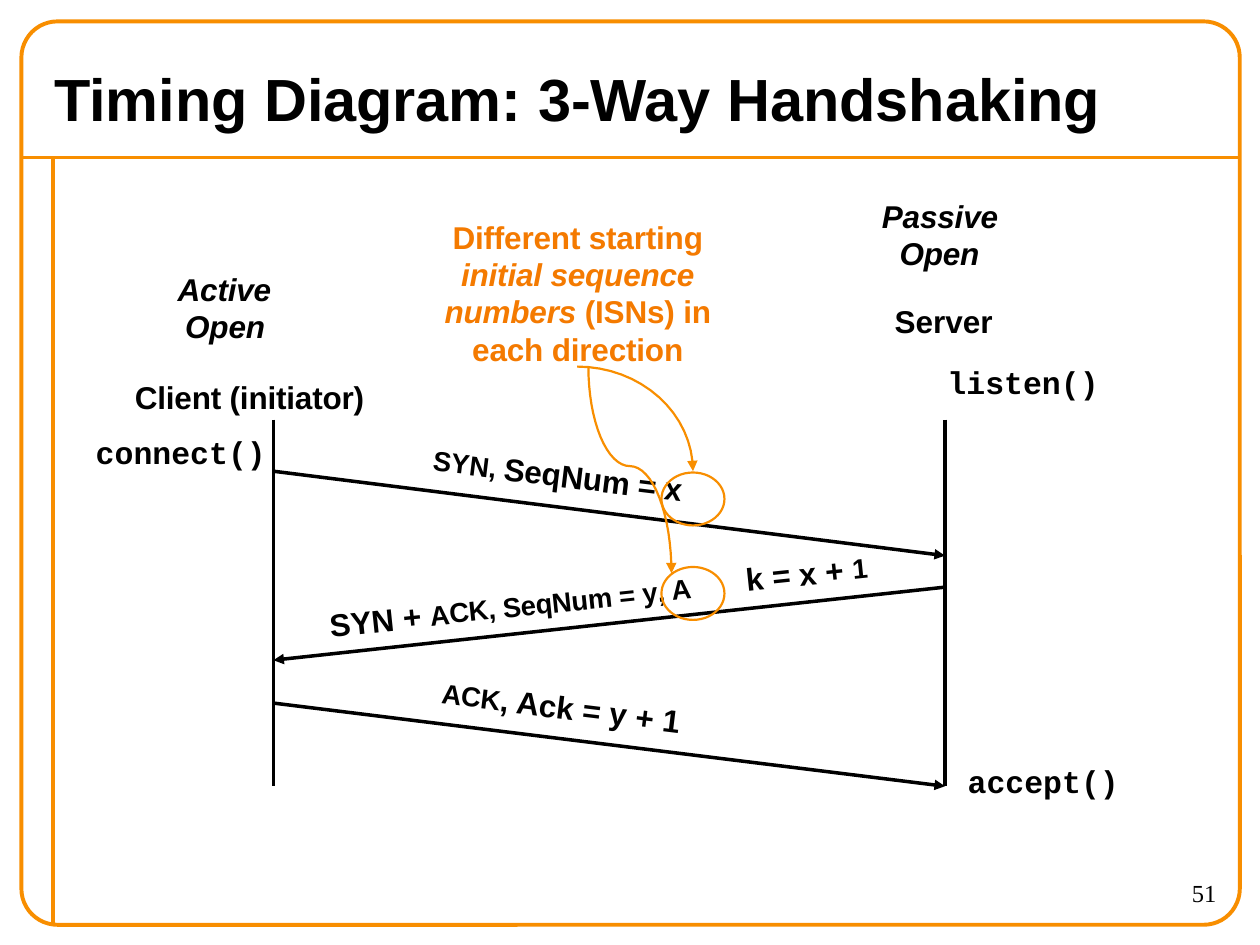
from math import cos, sin, pi

from lxml.etree import SubElement
from pptx import Presentation
from pptx.dml.color import RGBColor
from pptx.enum.shapes import MSO_CONNECTOR as Connector, MSO_SHAPE as Shape
from pptx.enum.text import PP_ALIGN as Align
from pptx.oxml.ns import qn
from pptx.util import Inches, Pt

COLORS = {"black": "000000", "frame": "F88E00", "note": "F47A00"}

BODY = {"name": "Arial", "size": Pt(18), "bold": True, "italic": False}
ROLE = {**BODY, "italic": True}
CODE = {**BODY, "name": "Courier New"}
TITLE = {**BODY, "size": Pt(34)}
FLAG = {**BODY, "size": Pt(27)}  # set as a slightly raised, reduced run
PAGE = {"name": "Times New Roman", "size": Pt(14), "bold": False}

CLIENT_X, SERVER_X = 2.17, 7.5
TOP, BOTTOM = 3.33, 6.24


def rgb(color):
    return RGBColor.from_string(COLORS[color])


def add_runs(paragraph, runs, color="black"):
    """Each run is (text, format, spacing in points)."""
    for text, style, spacing in runs:
        run = paragraph.add_run()
        run.text = text
        for attribute, value in style.items():
            setattr(run.font, attribute, value)
        run.font.color.rgb = rgb(color)
        properties = run._r.get_or_add_rPr()
        if spacing:
            properties.set("spc", str(round(spacing * 100)))
        if style is FLAG:
            properties.set("baseline", "2000")


def add_text(slide, box, paragraphs, color="black", rotation=0, indents=(), **layout):
    """Paragraphs are lists of runs; indents are (left, first line) pairs."""
    label = slide.shapes.add_textbox(*map(Inches, box))
    label.rotation = rotation
    frame = label.text_frame
    frame.word_wrap = True
    for side in ("left", "top", "right", "bottom"):
        setattr(frame, f"margin_{side}", 0)
    for index, runs in enumerate(paragraphs):
        paragraph = frame.add_paragraph() if index else frame.paragraphs[0]
        for attribute, value in layout.items():
            if index or attribute != "space_before":
                setattr(paragraph, attribute, value)
        if indents:
            left, first = indents[index]
            properties = paragraph._p.get_or_add_pPr()
            properties.set("marL", str(Inches(left)))
            properties.set("indent", str(Inches(first)))
        add_runs(paragraph, runs, color)


def style_line(shape, color, width, arrow=False):
    shape.line.color.rgb = rgb(color)
    shape.line.width = Pt(width)
    if arrow:
        SubElement(shape.line._get_or_add_ln(), qn("a:tailEnd"),
                   type="triangle", w="med", len="med")


def add_line(slide, start, end, color="black", width=2, arrow=False):
    line = slide.shapes.add_connector(Connector.STRAIGHT, *map(Inches, start + end))
    style_line(line, color, width, arrow)
    SubElement(line._element.spPr, qn("a:effectLst"))


def add_outline(slide, kind, box, width):
    outline = slide.shapes.add_shape(kind, *map(Inches, box))
    outline.shadow.inherit = False
    outline.fill.background()
    style_line(outline, "frame", width)
    return outline


def quarter_arc(center, radii, start, end, steps=16):
    """Points along an ellipse, angles in quarter turns clockwise from the right."""
    angles = [(start + (end - start) * i / steps) * pi / 2 for i in range(steps + 1)]
    return [(center[0] + radii[0] * cos(a), center[1] + radii[1] * sin(a)) for a in angles]


def add_curved_arrow(slide, points):
    first, *others = [(Inches(x), Inches(y)) for x, y in points]
    builder = slide.shapes.build_freeform(*first)
    builder.add_line_segments(others, close=False)
    curve = builder.convert_to_shape()
    curve.shadow.inherit = False
    curve.fill.background()
    style_line(curve, "frame", 1.25, arrow=True)


def add_frame(slide):
    add_line(slide, (0.17, 1.25), (9.83, 1.25), "frame", 2.25)
    add_line(slide, (0.42, 1.25), (0.42, 7.33), "frame", 2.25)
    border = add_outline(slide, Shape.ROUNDED_RECTANGLE, (0.17, 0.17, 9.67, 7.17), 2.25)
    border.adjustments[0] = 0.04
    add_text(slide, (0.43, 0.49, 9.15, 0.63),
             [[("Timing Diagram: 3-Way Handshaking", TITLE, 0)]])
    add_text(slide, (9.46, 6.97, 0.25, 0.25), [[("51", PAGE, 0)]])


def add_endpoints(slide):
    for x in (CLIENT_X, SERVER_X):
        add_line(slide, (x, TOP), (x, BOTTOM))
    add_text(slide, (0.75, 3, 2.18, 0.77),
             [[("Client (initiator)", BODY, -0.1)], [("connect()", CODE, 0)]],
             indents=[(0.32, 0), (0.01, 0)], space_before=Pt(10))
    add_text(slide, (7.09, 2.4, 1.64, 0.8),
             [[("Server", BODY, 0)], [("listen()", CODE, 0)]],
             indents=[(0.01, 0), (0.43, 0)], space_before=Pt(13))
    add_text(slide, (7.68, 6.05, 1.23, 0.33), [[("accept()", CODE, 0)]])
    add_text(slide, (1.4, 2.15, 0.78, 0.59), [[("Active Open", ROLE, -0.1)]],
             indents=[(0.07, -0.06)], line_spacing=Pt(21))
    add_text(slide, (6.99, 1.57, 0.96, 0.59), [[("Passive Open", ROLE, -0.1)]],
             indents=[(0.15, -0.14)], line_spacing=Pt(21))


def add_messages(slide):
    for start, end in (
        ((CLIENT_X, 3.74), (SERVER_X, 4.41)),
        ((SERVER_X, 4.66), (CLIENT_X, 5.24)),
        ((CLIENT_X, 5.58), (SERVER_X, BOTTOM)),
    ):
        add_line(slide, start, end, arrow=True)

    # Message labels, tilted along their arrows
    for box, tilt, runs in (
        ((3.43, 3.65, 2.11, 0.3), 7,
         [("SYN, ", FLAG, 0), ("SeqNum = x", BODY, -0.1)]),
        ((2.61, 4.67, 3.22, 0.3), 354,
         [("SYN + ", BODY, 0), ("ACK, ", FLAG, -0.1), ("SeqNum = ", FLAG, -0.1),
          ("y", FLAG, -2.1), (", A", FLAG, 0)]),
        ((5.92, 4.42, 1.03, 0.3), 354,
         [("k = x + ", BODY, 0), ("1", FLAG, 0)]),
        ((3.5, 5.49, 2, 0.3), 7,
         [("ACK", FLAG, -0.1), (", Ack = y + 1", BODY, 0)]),
    ):
        add_text(slide, box, [runs], rotation=tilt, line_spacing=Pt(21.4))


def add_sequence_note(slide):
    add_text(slide, (3.5, 1.74, 2.17, 1.2),
             [[("Different starting ", BODY, -0.1),
               ("initial sequence numbers ", ROLE, -0.1),
               ("(ISNs) in each direction", BODY, -0.1)]],
             color="note", alignment=Align.CENTER, line_spacing=0.99)

    # Pointers from the note to the two circled sequence numbers
    add_curved_arrow(slide, quarter_arc((4.58, 3.74), (0.92, 0.83), -1, 0))
    add_curved_arrow(slide, quarter_arc((5, 2.91), (0.33, 0.79), 2, 1)
                     + quarter_arc((5, 4.55), (0.33, 0.85), -1, 0)[1:])
    for top in (3.75, 4.5):
        add_outline(slide, Shape.OVAL, (5.25, top, 0.5, 0.42), 1.25)


def main():
    deck = Presentation()
    deck.slide_width, deck.slide_height = Inches(10), Inches(7.5)
    slide = deck.slides.add_slide(deck.slide_layouts[6])
    add_frame(slide)
    add_endpoints(slide)
    add_messages(slide)
    add_sequence_note(slide)
    deck.save("out.pptx")


if __name__ == "__main__":
    main()
